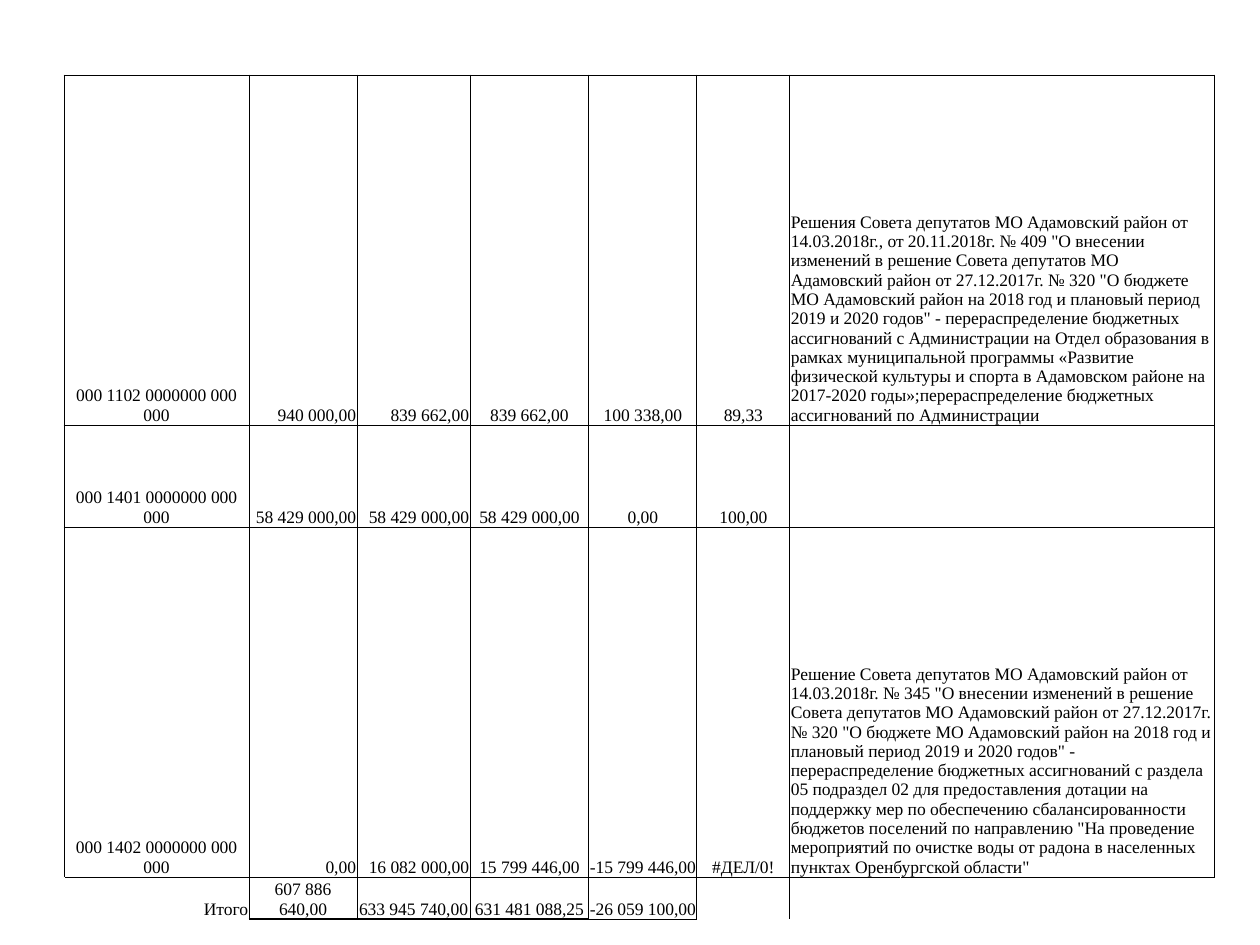
from dataclasses import dataclass
from typing import Optional

from lxml import etree
from pptx import Presentation
from pptx.dml.color import RGBColor
from pptx.enum import text
from pptx.oxml import ns
from pptx.util import Emu, Pt

SCALE = 914400 / 126
LEFT, TOP = 64, 75
COLS = [185, 108, 113, 119, 108, 93, 111, 314]
ROWS = [350, 102, 350, 42]
BLACK, WHITE = "000000", "FFFFFF"
SIDES = "LRTB"
ALIGN = {"l": text.PP_ALIGN.LEFT, "c": text.PP_ALIGN.CENTER, "r": text.PP_ALIGN.RIGHT}


@dataclass
class Edge:
    color: Optional[str] = BLACK
    width: float = 0.5


@dataclass
class Line:
    words: list[str]
    align: str
    total: bool = False


THIN, THICK = Edge(), Edge(width=1)
PALE, NONE = Edge(WHITE), Edge(None)

LINES = [
    Line(["000 1102 0000000 000 000", "940 000,00", "839 662,00", "839 662,00",
          "100 338,00", "89,33",
          "Решения Совета депутатов МО Адамовский район от 14.03.2018г., от 20.11.2018г. "
          "№ 409 \"О внесении изменений в решение Совета депутатов МО Адамовский район "
          "от 27.12.2017г. № 320 \"О бюджете МО Адамовский район на 2018 год и плановый "
          "период 2019 и 2020 годов\" - перераспределение бюджетных ассигнований с "
          "Администрации на Отдел образования в рамках муниципальной программы «Развитие "
          "физической культуры и спорта в Адамовском районе на 2017-2020 "
          "годы»;перераспределение бюджетных ассигнований по Администрации", ""],
         "crrcccll".replace("crrccc", "crrccc")),
    Line(["000 1401 0000000 000 000", "58 429 000,00", "58 429 000,00",
          "58 429 000,00", "0,00", "100,00", "", ""], "crrcccll"),
    Line(["000 1402 0000000 000 000", "0,00", "16 082 000,00", "15 799 446,00",
          "-15 799 446,00", "#ДЕЛ/0!",
          "Решение Совета депутатов МО Адамовский район от 14.03.2018г. № 345 "
          "\"О внесении изменений в решение Совета депутатов МО Адамовский район от "
          "27.12.2017г. № 320 \"О бюджете МО Адамовский район на 2018 год и плановый "
          "период 2019 и 2020 годов\" - перераспределение бюджетных ассигнований с "
          "раздела 05 подраздел 02 для предоставления дотации на поддержку мер по "
          "обеспечению сбалансированности бюджетов поселений по направлению "
          "\"На проведение мероприятий по очистке воды от радона в населенных пунктах "
          "Оренбургской области\"", ""], "crrcccll"),
    Line(["Итого", "607 886 640,00", "633 945 740,00", "631 481 088,25",
          "-26 059 100,00", "", "", ""], "rcccclll", True),
]

BODY = [THIN] * 4
SUM = [THIN, THIN, THIN, THICK]
TOTAL = [[PALE, THIN, THIN, PALE], SUM, SUM, SUM, BODY,
         [THIN, THIN, THIN, NONE], [THIN, PALE, THIN, PALE], [PALE, NONE, THIN, NONE]]


def px(size: int) -> Emu:
    return Emu(round(size * SCALE))


def rgb(color: str) -> RGBColor:
    return RGBColor.from_string(color)


def apply(item, values: dict) -> None:
    for name, value in values.items():
        setattr(item, name, value)


def border(cell, edges: list[Edge]) -> None:
    props = cell._tc.get_or_add_tcPr()
    for side, edge in zip(SIDES, edges):
        line = etree.SubElement(props, ns.qn(f"a:ln{side}"), w=str(Pt(edge.width)))
        if edge.color is None:
            etree.SubElement(line, ns.qn("a:noFill"))
        else:
            fill = etree.SubElement(line, ns.qn("a:solidFill"))
            etree.SubElement(fill, ns.qn("a:srgbClr"), val=edge.color)


def write(cell, words: str, align: str) -> None:
    para = cell.text_frame.paragraphs[0]
    para.alignment = ALIGN[align]
    if words:
        run = para.add_run()
        run.text = words
        apply(run.font, {"name": "Times New Roman", "size": Pt(10), "bold": False})
        run.font.color.rgb = rgb(BLACK)


def draw(table, row: int, line: Line) -> None:
    for col, (words, align) in enumerate(zip(line.words, line.align)):
        cell = table.cell(row, col)
        apply(cell, {"margin_left": px(1), "margin_right": px(1), "margin_top": px(1),
                     "margin_bottom": 0, "vertical_anchor": text.MSO_ANCHOR.BOTTOM})
        border(cell, TOTAL[col] if line.total else BODY)
        cell.fill.background()
        write(cell, words, align)
    if not line.total:
        table.cell(row, 6).merge(table.cell(row, 7))


def main() -> None:
    deck = Presentation()
    apply(deck, {"slide_width": px(1260), "slide_height": px(945)})
    slide = deck.slides.add_slide(deck.slide_layouts[6])
    table = slide.shapes.add_table(len(ROWS), len(COLS), px(LEFT), px(TOP),
                                   px(sum(COLS)), px(sum(ROWS))).table
    apply(table, {"first_row": False, "horz_banding": False})
    for col, width in zip(table.columns, COLS):
        col.width = px(width)
    for row, height in zip(table.rows, ROWS):
        row.height = px(height)
    for row, line in enumerate(LINES):
        draw(table, row, line)
    deck.save("out.pptx")


if __name__ == "__main__":
    main()
